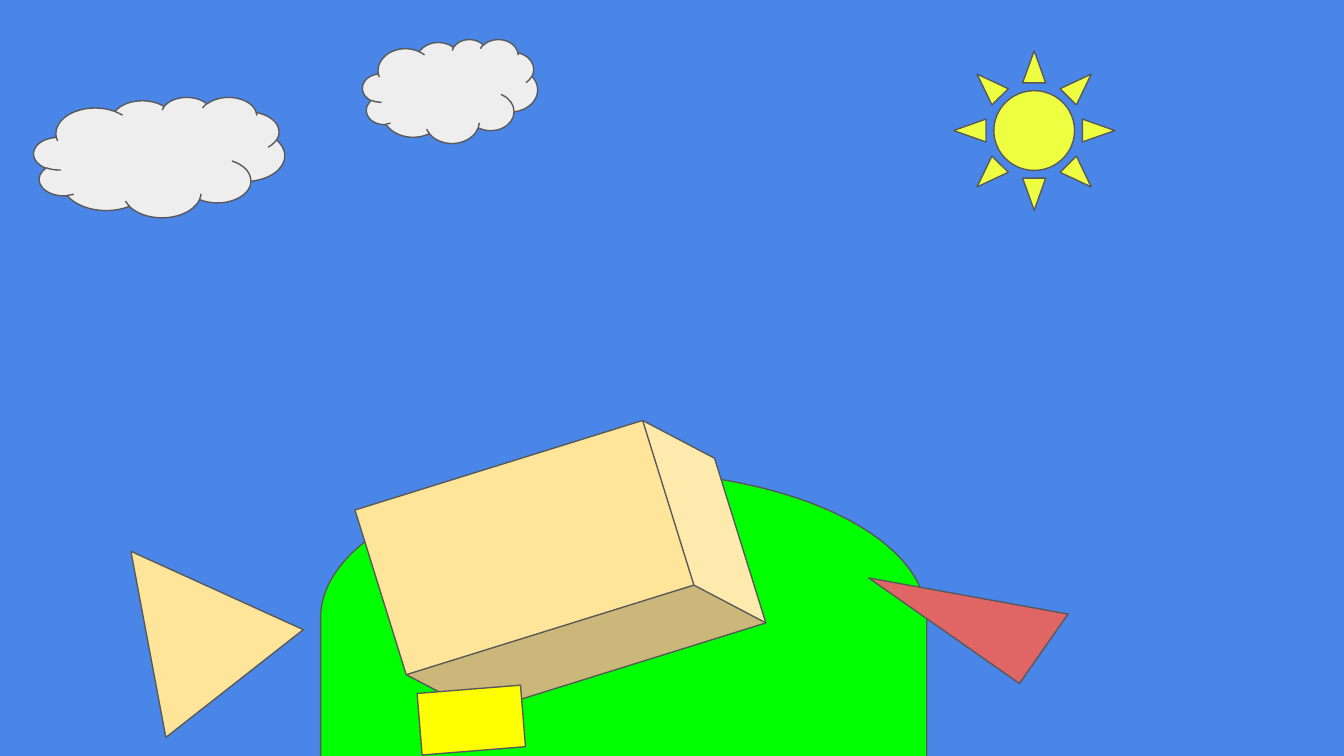
"""Build a landscape slide: sky, clouds, sun, hill and tumbled blocks."""
from dataclasses import dataclass

from pptx import Presentation
from pptx.dml.color import RGBColor
from pptx.enum.shapes import MSO_SHAPE
from pptx.util import Pt

CLOUD = MSO_SHAPE.CLOUD
SUN = MSO_SHAPE.SUN
DELAY = MSO_SHAPE.FLOWCHART_DELAY
CUBE = MSO_SHAPE.CUBE
TRIANGLE = MSO_SHAPE.ISOSCELES_TRIANGLE
RIGHT_TRIANGLE = MSO_SHAPE.RIGHT_TRIANGLE
RECTANGLE = MSO_SHAPE.RECTANGLE


@dataclass(frozen=True)
class Theme:
    sky: str = "4A86E8"
    cloud: str = "EEEEEE"
    sun: str = "EEFF41"
    grass: str = "00FF00"
    sand: str = "FFE599"
    red: str = "E06666"
    yellow: str = "FFFF00"
    outline: str = "595959"
    outline_width: float = 0.75


theme = Theme()

deck = Presentation()
deck.slide_width, deck.slide_height = Pt(720), Pt(405)
landscape = deck.slides.add_slide(deck.slide_layouts[6])
sky = landscape.background.fill
sky.solid()
sky.fore_color.rgb = RGBColor.from_string(theme.sky)

scenery = [
    (CLOUD, 194.2, 21, 93.8, 55.7, 0, theme.cloud),
    (CLOUD, 18, 52, 134.5, 64.5, 0, theme.cloud),
    (SUN, 510.8, 27.2, 86.5, 85.5, 0, theme.sun),
    (DELAY, 256, 168.5, 156.2, 324.7, 270, theme.grass),
    (CUBE, 238.6, 207.4, 123.2, 192.2, 72.7, theme.sand),
    (TRIANGLE, 51.1, 285.8, 93.6, 90, 321.9, theme.sand),
    (RIGHT_TRIANGLE, 496.1, 270, 45.4, 98.6, 305, theme.red),
    (RECTANGLE, 235.9, 358, 33.1, 55.6, 85.4, theme.yellow),
]

for preset, left, top, width, height, angle, color in scenery:
    feature = landscape.shapes.add_shape(preset, Pt(left), Pt(top), Pt(width), Pt(height))
    feature.rotation = angle
    feature.shadow.inherit = False
    feature.fill.solid()
    feature.fill.fore_color.rgb = RGBColor.from_string(color)
    feature.line.color.rgb = RGBColor.from_string(theme.outline)
    feature.line.width = Pt(theme.outline_width)

deck.save("out.pptx")
